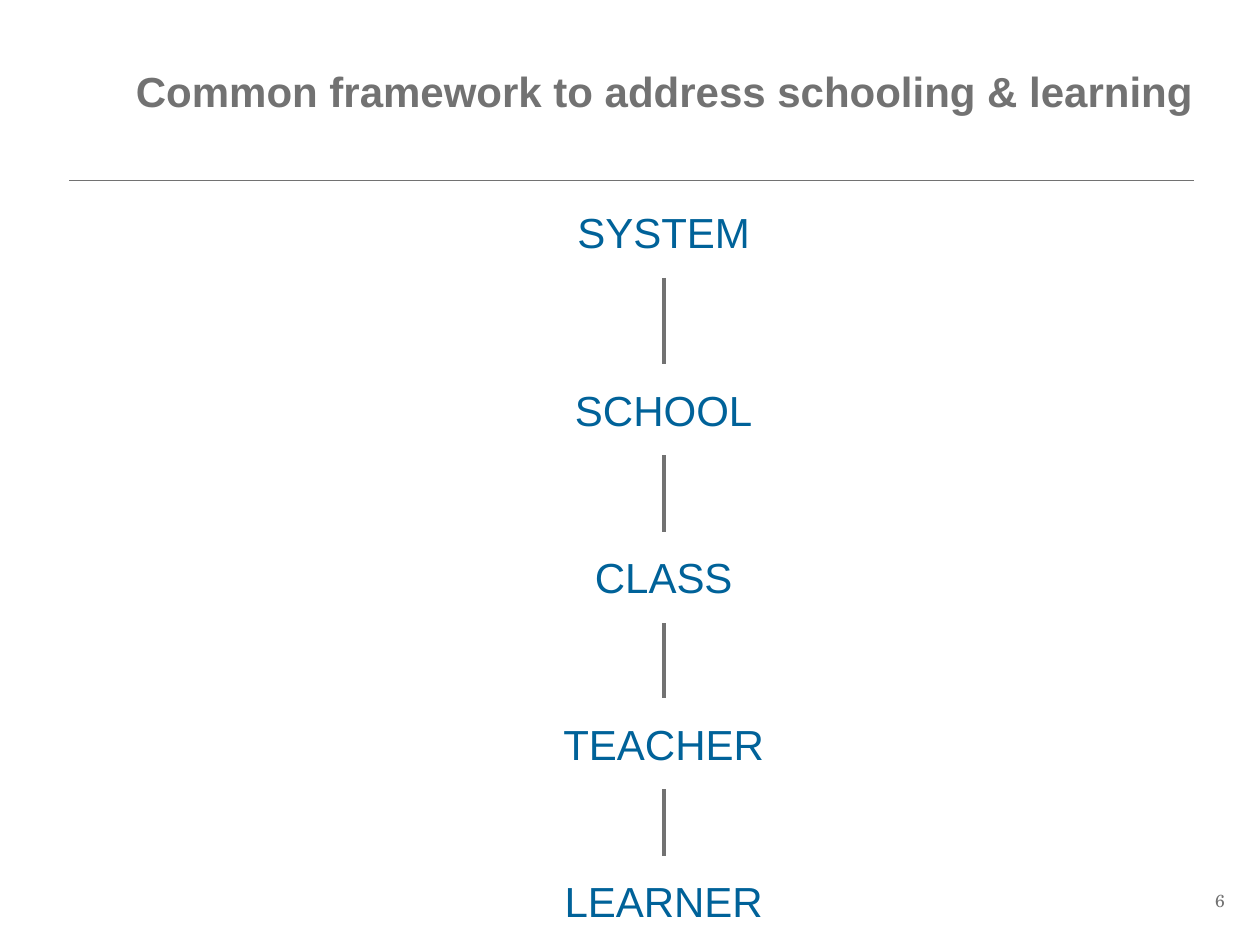
from lxml.etree import SubElement
from pptx import Presentation
from pptx.dml.color import RGBColor
from pptx.enum.shapes import MSO_CONNECTOR
from pptx.enum.text import MSO_ANCHOR, PP_ALIGN
from pptx.oxml.ns import qn
from pptx.util import Cm, Pt

GREY, BLUE = "727272", "006299"
# Name, distance below the top of the chain and box width, in cm
LEVELS = [
    ("SYSTEM", 0, 5),
    ("SCHOOL", 3.58, 5.2),
    ("CLASS", 6.96, 4.6),
    ("TEACHER", 10.31, 5),
    ("LEARNER", 13.49, 5.8),
]
LABEL_HEIGHT = 1.28
GAP = 0.28


def rgb(color):
    return RGBColor.from_string(color)


def add_text(s, text, x, y, w, h, size, color, align=PP_ALIGN.LEFT,
             font="Arial", bold=False, anchor=MSO_ANCHOR.TOP, wrap=True):
    tf = s.shapes.add_textbox(Cm(x), Cm(y), Cm(w), Cm(h)).text_frame
    tf.word_wrap = wrap
    tf.vertical_anchor = anchor
    p = tf.paragraphs[0]
    p.text = text
    p.alignment = align
    f = p.runs[0].font
    f.name, f.size, f.bold = font, Pt(size), bold
    f.color.rgb = rgb(color)


def add_line(s, x1, y1, x2, y2, width):
    line = s.shapes.add_connector(MSO_CONNECTOR.STRAIGHT,
                                  Cm(x1), Cm(y1), Cm(x2), Cm(y2))
    line.line.color.rgb = rgb(GREY)
    line.line.width = Pt(width)
    SubElement(line._element.spPr, qn("a:effectLst"))


def add_header(s, x, y, w, h):
    """Title in the upper part of the box, with a rule along its bottom."""
    add_text(s, "Common framework to address schooling & learning",
             x + 1.09, y, w + 0.25, 2.59, 24, GREY,
             bold=True, anchor=MSO_ANCHOR.MIDDLE)
    add_line(s, x, y + h, x + w, y + h, 0.5)


def add_chain(s, center, top):
    """Levels stacked around a centre line, each linked to the next."""
    for name, offset, w in LEVELS:
        add_text(s, name, center - w / 2, top + offset, w, LABEL_HEIGHT,
                 24, BLUE, PP_ALIGN.CENTER)
    for (_, upper, _), (_, lower, _) in zip(LEVELS, LEVELS[1:]):
        add_line(s, center, top + upper + LABEL_HEIGHT + GAP,
                 center, top + lower - GAP, 2.25)


def add_page_number(s, x, y, w, h):
    add_text(s, "6", x, y, w, h, 10, GREY, PP_ALIGN.RIGHT,
             font="TeX Gyre Schola", wrap=False)


def main():
    prs = Presentation()
    prs.slide_width, prs.slide_height = Cm(25.4), Cm(19.05)
    s = prs.slides.add_slide(prs.slide_layouts[6])
    add_header(s, 1.4, 0.53, 22.66, 3.1)
    add_chain(s, 13.38, 4.04)
    add_page_number(s, 24, 17.81, 0.94, 0.69)
    prs.save("out.pptx")


if __name__ == "__main__":
    main()
